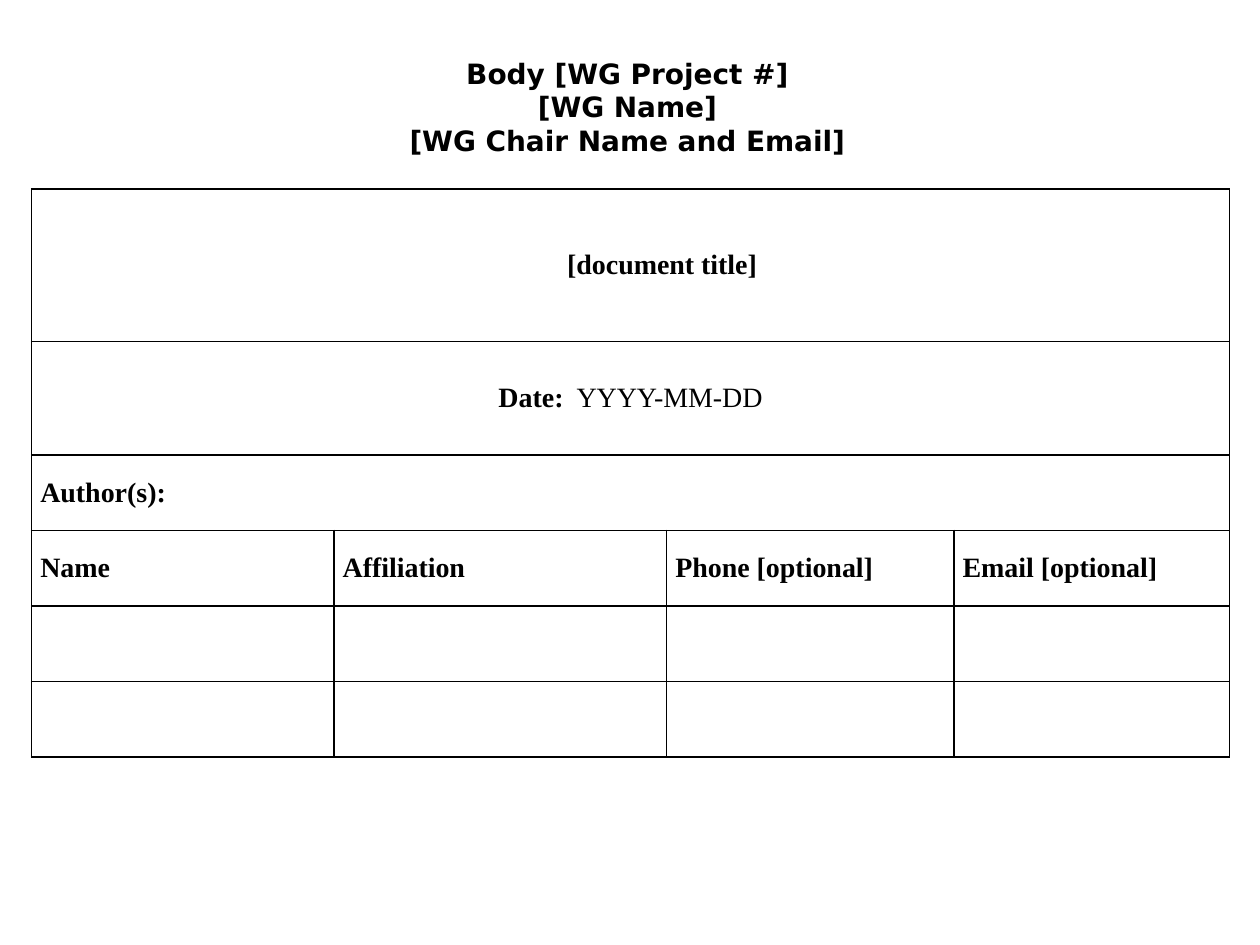
from lxml import etree
from pptx import Presentation
from pptx.dml.color import RGBColor
from pptx.enum.text import MSO_ANCHOR, MSO_AUTO_SIZE, PP_ALIGN
from pptx.oxml.ns import qn
from pptx.util import Inches, Pt

LEFT, CENTER = PP_ALIGN.LEFT, PP_ALIGN.CENTER
MIDDLE = MSO_ANCHOR.MIDDLE
FIT_SHAPE = MSO_AUTO_SIZE.SHAPE_TO_FIT_TEXT
SERIF, SANS = "Times New Roman", "DejaVu Sans"
BLACK = "000000"
COLUMN_WIDTHS = [2.4, 2.64, 2.28, 2.19]
ROW_HEIGHTS = [1.21, 0.9, 0.6, 0.6, 0.6, 0.6]
AUTHOR_HEADINGS = ["Name", "Affiliation", "Phone [optional]", "Email [optional]"]


def color(value):
    """Turn a hex string into a colour."""
    return RGBColor.from_string(value)


def add_text(paragraph, text, font=SERIF, size=16, bold=True, fill=BLACK):
    """Add formatted text to a paragraph, with line breaks at newlines."""
    for index, line in enumerate(text.split("\n")):
        if index:
            paragraph.add_line_break()
        run = paragraph.add_run()
        run.text = line
        run.font.name = font
        run.font.size = Pt(size)
        run.font.bold = bold
        run.font.color.rgb = color(fill)


def add_heading(slide, texts):
    """Add the centred working group heading, one paragraph per text."""
    box = slide.shapes.add_textbox(Inches(3.11), Inches(0.39), Inches(3.74), Inches(0.91))
    frame = box.text_frame
    frame.word_wrap = False
    frame.auto_size = FIT_SHAPE
    frame.vertical_anchor = MIDDLE
    for index, text in enumerate(texts):
        paragraph = frame.add_paragraph() if index else frame.paragraphs[0]
        paragraph.alignment = CENTER
        add_text(paragraph, text, font=SANS)


def format_cell(cell, border=BLACK, width=1):
    """Give a cell thin borders, no fill and narrow margins."""
    properties = cell._tc.get_or_add_tcPr()
    for side in ("lnL", "lnR", "lnT", "lnB"):
        line = etree.SubElement(properties, qn(f"a:{side}"), w=str(Pt(width)))
        fill = etree.SubElement(line, qn("a:solidFill"))
        etree.SubElement(fill, qn("a:srgbClr"), val=border)
    cell.fill.background()
    cell.vertical_anchor = MIDDLE
    cell.margin_left = cell.margin_right = Inches(0.07)
    cell.margin_top = cell.margin_bottom = 0


def fill_cell(cell, text, value="", align=LEFT, indent=0, after=0):
    """Write bold text and an optional plain value in a cell."""
    paragraph = cell.text_frame.paragraphs[0]
    paragraph.alignment = align
    paragraph.space_after = Pt(after)
    if indent:
        properties = paragraph._p.get_or_add_pPr()
        properties.set("marL", str(Inches(indent)))
        properties.set("indent", "0")
    add_text(paragraph, text)
    if value:
        add_text(paragraph, value, bold=False)


def add_document_table(slide):
    """Add the table of title, date and authors."""
    rows, columns = len(ROW_HEIGHTS), len(COLUMN_WIDTHS)
    frame = slide.shapes.add_table(
        rows, columns, Inches(0.25), Inches(1.5), Inches(9.5), Inches(4.5))
    table = frame.table
    table.first_row = table.horz_banding = False
    for column, width in zip(table.columns, COLUMN_WIDTHS):
        column.width = Inches(width)
    for row, height in zip(table.rows, ROW_HEIGHTS):
        row.height = Inches(height)
    for cell in table.iter_cells():
        format_cell(cell)
    for row in range(3):
        table.cell(row, 0).merge(table.cell(row, columns - 1))
    fill_cell(table.cell(0, 0), "[document title]", align=CENTER, indent=0.5, after=12)
    fill_cell(table.cell(1, 0), "Date:", value="  YYYY-MM-DD", align=CENTER, after=12)
    fill_cell(table.cell(2, 0), "Author(s):")
    for column, heading in enumerate(AUTHOR_HEADINGS):
        fill_cell(table.cell(3, column), heading)


def main():
    """Build and save the cover slide."""
    presentation = Presentation()
    presentation.slide_width = Inches(10)
    presentation.slide_height = Inches(7.5)
    slide = presentation.slides.add_slide(presentation.slide_layouts[6])
    add_document_table(slide)
    add_heading(slide, ["Body [WG Project #]\n[WG Name]", "[WG Chair Name and Email]"])
    presentation.save("out.pptx")


if __name__ == "__main__":
    main()
